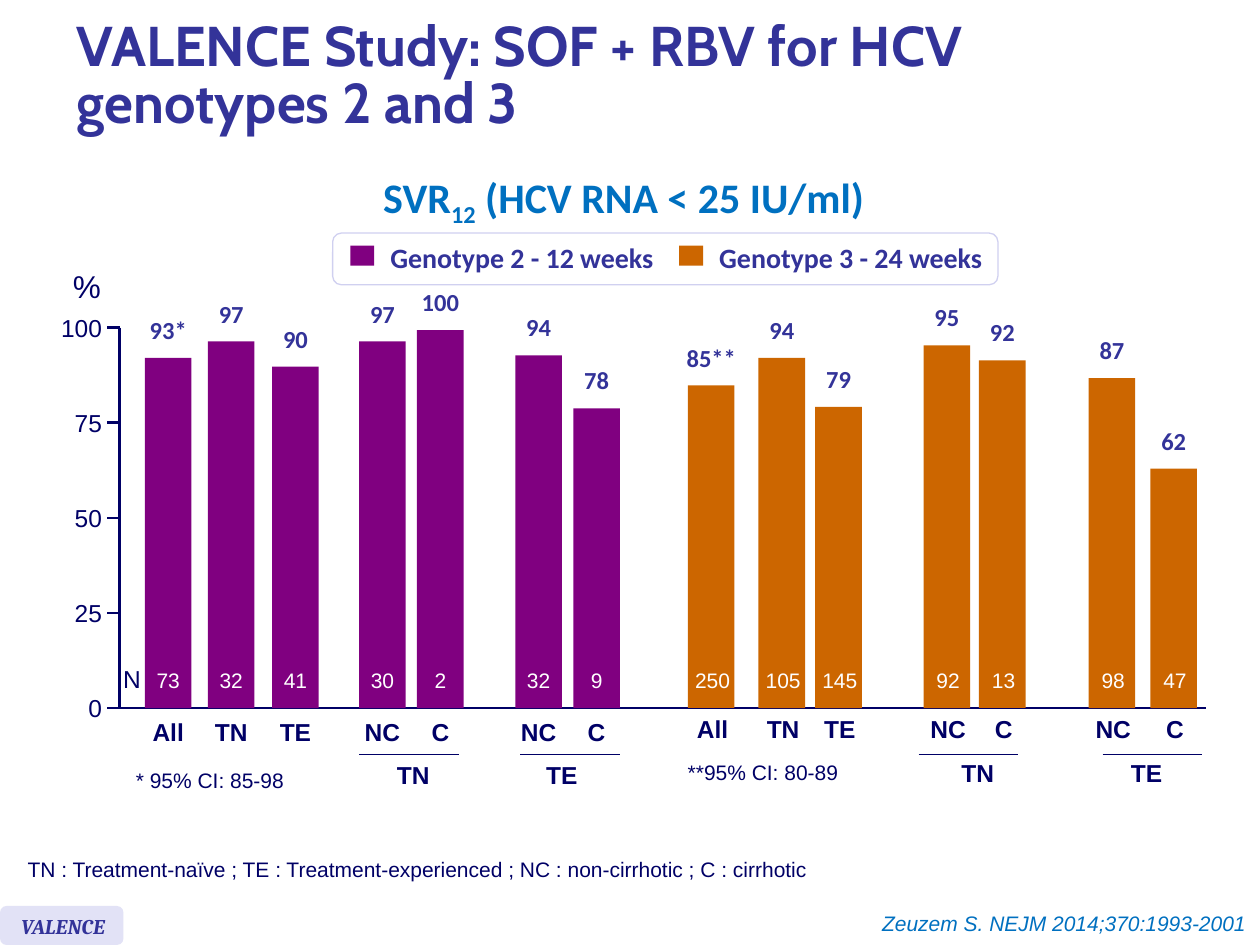
from pptx import Presentation
from pptx.dml.color import RGBColor
from pptx.enum.shapes import MSO_CONNECTOR, MSO_SHAPE
from pptx.enum.text import MSO_ANCHOR, MSO_AUTO_SIZE, PP_ALIGN
from pptx.oxml.ns import qn
from pptx.util import Inches, Pt
from lxml.etree import SubElement

COLORS = {
    "navy": "000066", "indigo": "333399", "blue": "0070C0", "white": "FFFFFF",
    "purple": "800080", "orange": "CC6600", "lilac": "D0D0F0", "pale": "E2E2F6",
}
LEFT, CENTER, RIGHT = PP_ALIGN.LEFT, PP_ALIGN.CENTER, PP_ALIGN.RIGHT

TITLE = "VALENCE Study: SOF + RBV for HCV genotypes 2 and 3"
HEADING = [("SVR", False), ("12", True), (" (HCV RNA < 25 IU/ml)", False)]
ABBREVIATIONS = ("TN : Treatment-naïve ; TE : Treatment-experienced ; "
                 "NC : non-cirrhotic ; C : cirrhotic")
CITATION = "Zeuzem S. NEJM 2014;370:1993-2001"

# bars: left, top, SVR label, N, category; brackets: line left, label center, label
GENOTYPES = [
    {
        "name": "Genotype 2 - 12 weeks", "color": "purple", "legend_x": 2.78,
        "label_shift": 0, "label_top": 5.64,
        "bars": [
            (1.15, 2.84, "93*", "73", "All"), (1.65, 2.71, "97", "32", "TN"),
            (2.16, 2.91, "90", "41", "TE"), (2.85, 2.71, "97", "30", "NC"),
            (3.31, 2.62, "100", "2", "C"), (4.09, 2.82, "94", "32", "NC"),
            (4.55, 3.24, "78", "9", "C"),
        ],
        "brackets": [(2.85, 3.28, "TN"), (4.13, 4.46, "TE")],
        "note": ("* 95% CI: 85-98", 0.98, 6.04),
    },
    {
        "name": "Genotype 3 - 24 weeks", "color": "orange", "legend_x": 5.39,
        "label_shift": 0.01, "label_top": 5.62,
        "bars": [
            (5.46, 3.06, "85**", "250", "All"), (6.02, 2.84, "94", "105", "TN"),
            (6.47, 3.23, "79", "145", "TE"), (7.33, 2.74, "95", "92", "NC"),
            (7.77, 2.86, "92", "13", "C"), (8.64, 3.00, "87", "98", "NC"),
            (9.13, 3.72, "62", "47", "C"),
        ],
        "brackets": [(7.29, 7.76, "TN"), (8.75, 9.1, "TE")],
        "note": ("**95% CI: 80-89", 5.36, 5.98),
    },
]

AXIS_X, TICK_X, AXIS_RIGHT = 0.95, 0.85, 9.57
BASE_Y, AXIS_TOP = 5.62, 2.6
BAR_W, BRACKET_W, BRACKET_Y = 0.37, 0.79, 5.99

prs = Presentation()
prs.slide_width, prs.slide_height = Inches(10), Inches(7.5)
slide = prs.slides.add_slide(prs.slide_layouts[5])


def rgb(name):
    return RGBColor.from_string(COLORS[name])


def add_run(p, text, size, color, font="Arial", bold=False, italic=False):
    r = p.add_run()
    r.text = text
    r.font.name, r.font.size = font, Pt(size)
    r.font.bold, r.font.italic = bold, italic
    r.font.color.rgb = rgb(color)
    return r


def add_text(x, y, w, h, text, size, color="navy", align=LEFT, insets=(0.1, 0.05),
             wrap=False, spacing=None, anchor=MSO_ANCHOR.TOP, **style):
    """Text box; insets are (horizontal, vertical). Returns its paragraph."""
    tf = slide.shapes.add_textbox(Inches(x), Inches(y), Inches(w), Inches(h)).text_frame
    tf.word_wrap = wrap
    tf.auto_size = MSO_AUTO_SIZE.SHAPE_TO_FIT_TEXT
    tf.vertical_anchor = anchor
    tf.margin_left = tf.margin_right = Inches(insets[0])
    tf.margin_top = tf.margin_bottom = Inches(insets[1])
    p = tf.paragraphs[0]
    p.alignment = align
    if spacing:
        p.line_spacing = spacing
    if text:
        add_run(p, text, size, color, **style)
    return p


def add_centered(cx, y, w, h, text, size, color="navy", **options):
    add_text(cx - w / 2, y, w, h, text, size, color, align=CENTER, **options)


def add_box(x, y, w, h, fill, line=None, rounded=False):
    kind = MSO_SHAPE.ROUNDED_RECTANGLE if rounded else MSO_SHAPE.RECTANGLE
    sp = slide.shapes.add_shape(kind, Inches(x), Inches(y), Inches(w), Inches(h))
    sp.shadow.inherit = False
    sp.fill.solid()
    sp.fill.fore_color.rgb = rgb(fill)
    if line:
        sp.line.color.rgb = rgb(line)
        sp.line.width = Pt(0.75)
    else:
        sp.line.fill.background()


def add_line(x1, y1, x2, y2, width=1.5):
    cn = slide.shapes.add_connector(MSO_CONNECTOR.STRAIGHT, Inches(x1), Inches(y1),
                                    Inches(x2), Inches(y2))
    cn.line.color.rgb = rgb("navy")
    cn.line.width = Pt(width)
    SubElement(cn._element.spPr, qn("a:effectLst"))


def add_title():
    title = slide.shapes.title
    title.left, title.top = Inches(0.51), Inches(0.08)
    title.width, title.height = Inches(9.13), Inches(1.07)
    tf = title.text_frame
    tf.word_wrap, tf.auto_size = True, MSO_AUTO_SIZE.NONE
    tf.vertical_anchor = MSO_ANCHOR.MIDDLE
    p = tf.paragraphs[0]
    p.alignment, p.line_spacing = LEFT, 0.85
    add_run(p, TITLE, 32, "indigo", "Cabin", bold=True)

    p = add_text(2.84, 1.31, 4.22, 0.5, "", 24, align=CENTER)
    for text, subscript in HEADING:
        r = add_run(p, text, 24, "blue", "Calibri", bold=True)
        if subscript:
            r._r.get_or_add_rPr().set("baseline", "-25000")


def add_axes():
    add_line(AXIS_X, AXIS_TOP, AXIS_X, BASE_Y)
    add_line(TICK_X, BASE_Y, AXIS_RIGHT, BASE_Y)
    for value in range(0, 101, 25):
        y = BASE_Y - (BASE_Y - AXIS_TOP) * value / 100
        if value:
            add_line(TICK_X, y, AXIS_X, y)
        add_text(0.46, y - 0.12, 0.35, 0.24, str(value), 14, align=RIGHT,
                 insets=(0, 0), anchor=MSO_ANCHOR.MIDDLE)
    add_text(0.48, 2.07, 0.42, 0.4, "%", 18)
    add_text(0.88, 5.22, 0.34, 0.34, "N", 14)


def add_genotype(group):
    for left, top, svr, n, category in group["bars"]:
        cx = left + BAR_W / 2
        label_cx = cx + group["label_shift"]
        add_box(left, top, BAR_W, BASE_Y - top, group["color"])
        add_centered(cx, top - 0.44, 0.22 + 0.1 * len(svr), 0.44, svr, 14, "indigo",
                     insets=(0.1, 0.1), font="Calibri", bold=True)
        add_centered(label_cx, 5.25, 0.22 + 0.1 * len(n), 0.3, n, 12, "white")
        add_centered(label_cx, group["label_top"], 0.52, 0.34, category, 14, bold=True)
    for left, cx, label in group["brackets"]:
        add_line(left, BRACKET_Y, left + BRACKET_W, BRACKET_Y, 0.75)
        add_centered(cx, group["label_top"] + 0.37, 0.5, 0.31, label, 14,
                     spacing=0.9, bold=True)
    note, x, y = group["note"]
    add_text(x, y, 1.82, 0.3, note, 12, wrap=True)

    x = group["legend_x"]
    add_box(x, 1.95, 0.19, 0.16, group["color"])
    add_text(x + 0.22, 1.86, 2.32, 0.37, group["name"], 16, "indigo",
             font="Calibri", bold=True)


add_title()
add_axes()
add_box(2.64, 1.85, 5.28, 0.41, "white", line="lilac", rounded=True)
for genotype in GENOTYPES:
    add_genotype(genotype)
add_text(0.12, 6.75, 6.45, 0.3, ABBREVIATIONS, 12)
add_box(0, 7.19, 0.98, 0.31, "pale", rounded=True)
add_text(0.07, 7.2, 1.06, 0.3, "VALENCE", 12, "indigo", wrap=True,
         font="Cambria", bold=True, italic=True)
add_text(5.48, 7.18, 4.51, 0.3, CITATION, 12, "blue", align=RIGHT, wrap=True, italic=True)
prs.save("out.pptx")
